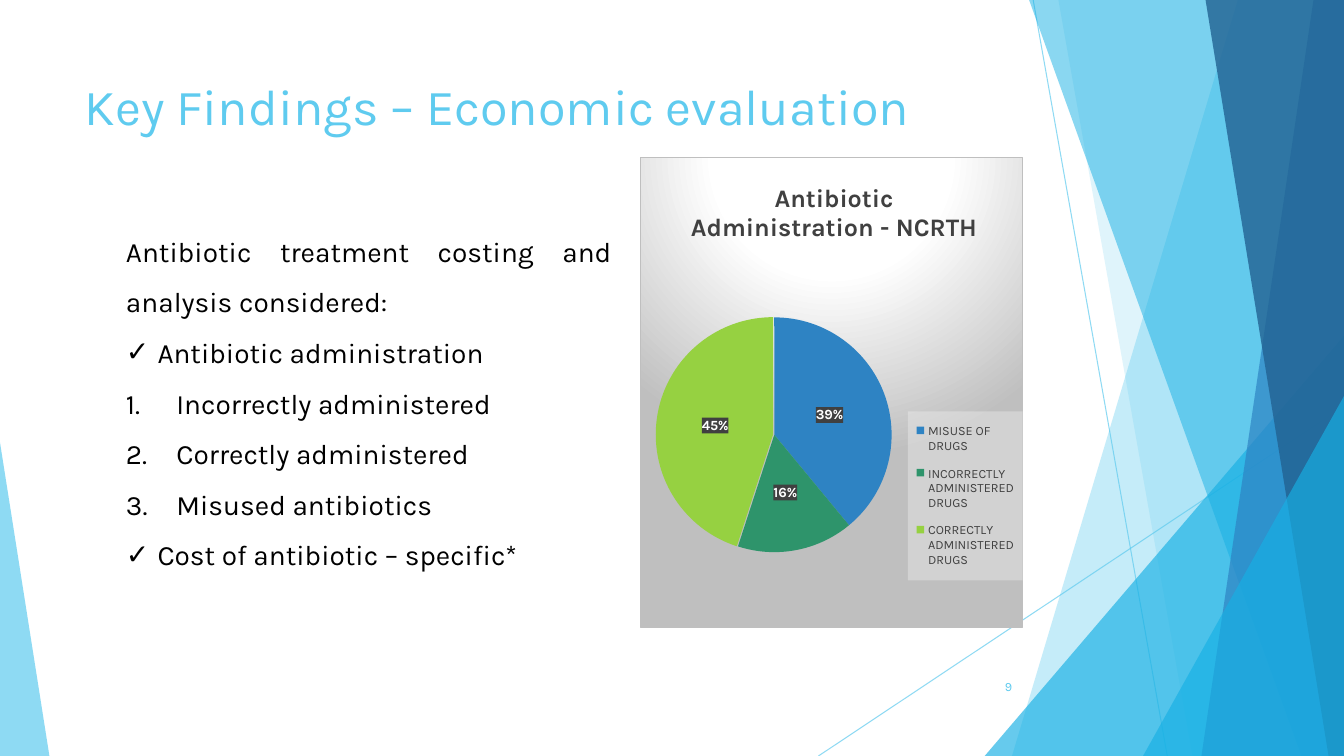
"""Build the Key Findings slide with its costing list and antibiotic pie chart."""
from dataclasses import dataclass

from lxml.etree import SubElement
from pptx import Presentation
from pptx.chart.data import CategoryChartData
from pptx.dml.color import RGBColor
from pptx.enum.chart import XL_CHART_TYPE as ChartType, XL_LABEL_POSITION as LabelPosition
from pptx.enum.chart import XL_LEGEND_POSITION as LegendPosition
from pptx.enum.shapes import MSO_CONNECTOR as Connector, MSO_SHAPE as Preset
from pptx.enum.text import MSO_ANCHOR as Anchor, MSO_AUTO_SIZE as AutoSize, PP_ALIGN as Align
from pptx.oxml import parse_xml
from pptx.oxml.ns import nsdecls, qn
from pptx.util import Pt


@dataclass(frozen=True)
class Theme:
    """Colours, font and type sizes of the slide."""
    font: str = "Karla"
    sky: str = "5FCBEF"
    cyan: str = "17B0E4"
    blue: str = "2E83C3"
    navy: str = "226292"
    green: str = "2E946B"
    lime: str = "96D141"
    black: str = "000000"
    white: str = "FFFFFF"
    dark: str = "404040"
    pale: str = "F2F2F2"
    grey: str = "BFBFBF"
    title: int = 36
    body: int = 20
    chart_title: int = 18
    label: int = 10
    small: int = 9


THEME = Theme()
WIDTH, HEIGHT = 960, 540

TITLE = "Key Findings – Economic evaluation"
PAGE = "9"
FINDINGS = [
    ("plain", "Antibiotic treatment costing and analysis considered:"),
    ("check", "Antibiotic administration"),
    ("number", "Incorrectly administered"),
    ("number", "Correctly administered"),
    ("number", "Misused antibiotics"),
    ("check", "Cost of antibiotic – specific*"),
]
INDENTS = {"plain": 0, "check": 22.5, "number": 36}
CHART_TITLE = "Antibiotic Administration - NCRTH"
SLICES = [
    ("MISUSE OF DRUGS", 39, THEME.blue),
    ("INCORRECTLY ADMINISTERED DRUGS", 16, THEME.green),
    ("CORRECTLY ADMINISTERED DRUGS", 45, THEME.lime),
]

BOXES = {
    "title": (53.3, 48.2, 676.8, 54.7),
    "page": (676, 476, 54, 28.8),
    "chart": (457.2, 112.3, 273.6, 336.2),
    "body": (82.8, 151.9, 361.4, 290),
}
RAYS = [((738, 0), (833.8, HEIGHT)), ((WIDTH, 290.2), (584.6, HEIGHT))]
DECORATION = [
    ("ribbon", (884.2, 722.9), THEME.sky, 36),
    ("ribbon", (756, 851.8), THEME.sky, 20),
    ("triangle", (703.4, 239.8, WIDTH, 1), THEME.cyan, 66),
    ("ribbon", (735.1, 929.5), THEME.cyan, 50),
    ("ribbon", (938.2, 858.2), THEME.blue, 70),
    ("ribbon", (861.1, 949), THEME.navy, 80),
    ("triangle", (816.5, 283, WIDTH, 1), THEME.cyan, 66),
    ("triangle", (0, 316.1, 35.3, 0), THEME.sky, 70),
]


def points(values):
    return [Pt(value) for value in values]


def style(font, size, color, bold=False):
    font.name, font.size, font.bold = THEME.font, Pt(size), bold
    font.color.rgb = RGBColor.from_string(color)


def set_alpha(shape, percent):
    for color in shape.element.iter(qn("a:srgbClr")):
        SubElement(color, qn("a:alpha"), val=str(percent * 1000))


def place(shape, name):
    shape.left, shape.top, shape.width, shape.height = points(BOXES[name])


def add_rays(slide):
    for start, end in RAYS:
        ray = slide.shapes.add_connector(Connector.STRAIGHT, *points(start + end))
        ray.line.width = Pt(0.75)
        ray.line.color.rgb = RGBColor.from_string(THEME.sky)
        set_alpha(ray, 70)
        SubElement(ray.element.spPr, qn("a:effectLst"))


def add_decoration(slide):
    for kind, geometry, color, alpha in DECORATION:
        if kind == "ribbon":
            top, bottom = geometry
            builder = slide.shapes.build_freeform(Pt(top), 0)
            corners = [(WIDTH, 0), (WIDTH, HEIGHT), (bottom, HEIGHT)]
            builder.add_line_segments([points(corner) for corner in corners], close=True)
            shape = builder.convert_to_shape()
        else:
            left, top, right, apex = geometry
            box = points((left, top, right - left, HEIGHT - top))
            shape = slide.shapes.add_shape(Preset.ISOSCELES_TRIANGLE, *box)
            shape.adjustments[0] = apex
        shape.shadow.inherit = False
        shape.fill.solid()
        shape.fill.fore_color.rgb = RGBColor.from_string(color)
        shape.line.fill.background()
        set_alpha(shape, alpha)


def add_line(shape, name, text, size, align):
    place(shape, name)
    frame = shape.text_frame
    frame.text = text
    frame.word_wrap, frame.auto_size = True, AutoSize.NONE
    frame.vertical_anchor = Anchor.MIDDLE
    frame.paragraphs[0].alignment = align
    style(frame.paragraphs[0].runs[0].font, size, THEME.sky)


def set_bullet(paragraph, kind):
    properties = paragraph._p.get_or_add_pPr()
    indent = Pt(INDENTS[kind])
    properties.set("marL", str(indent))
    properties.set("indent", str(-indent))
    if kind == "plain":
        SubElement(properties, qn("a:buNone"))
    elif kind == "check":
        SubElement(properties, qn("a:buChar"), char="✓")
    else:
        SubElement(properties, qn("a:buFont"), typeface=THEME.font)
        SubElement(properties, qn("a:buAutoNum"), type="arabicPeriod")


def fill_body(body):
    place(body, "body")
    frame = body.text_frame
    frame.text = "\n".join(text for kind, text in FINDINGS)
    frame.word_wrap, frame.auto_size = True, AutoSize.NONE
    frame.vertical_anchor = Anchor.TOP
    for paragraph, (kind, text) in zip(frame.paragraphs, FINDINGS):
        paragraph.alignment = Align.JUSTIFY if kind == "plain" else Align.LEFT
        paragraph.line_spacing = 1.5
        paragraph.space_before, paragraph.space_after = Pt(0), Pt(0.1)
        set_bullet(paragraph, kind)
        style(paragraph.runs[0].font, THEME.body, THEME.black)


def set_layout(parent, index, target=None, **fractions):
    for previous in parent.findall(qn("c:layout")):
        parent.remove(previous)
    modes = {"xMode": "edge", "yMode": "edge"}
    settings = {"layoutTarget": target, **modes} if target else modes
    items = {**settings, **fractions}
    tags = "".join(f'<c:{tag} val="{value}"/>' for tag, value in items.items())
    layout = f'<c:layout {nsdecls("c")}><c:manualLayout>{tags}</c:manualLayout></c:layout>'
    parent.insert(index, parse_xml(layout))


def chart_fill(content):
    return parse_xml(f'<c:spPr {nsdecls("c", "a")}>{content}</c:spPr>')


def solid(color, alpha=100):
    return f'<a:solidFill><a:srgbClr val="{color}"><a:alpha val="{alpha * 1000}"/></a:srgbClr></a:solidFill>'


def add_pie(slide):
    data = CategoryChartData()
    data.categories = [name for name, value, color in SLICES]
    data.add_series("Series 1", [value for name, value, color in SLICES])
    chart = slide.shapes.add_chart(ChartType.PIE, *points(BOXES["chart"]), data).chart
    style(chart.font, THEME.label, THEME.black)
    chart.has_title = chart.has_legend = True
    chart.chart_title.text_frame.text = CHART_TITLE
    style(chart.chart_title.text_frame.paragraphs[0].runs[0].font, THEME.chart_title, THEME.dark, True)
    chart.legend.position = LegendPosition.RIGHT
    chart.legend.include_in_layout = False
    style(chart.legend.font, THEME.small, THEME.dark)

    plot = chart.plots[0]
    plot.vary_by_categories = True
    plot.has_data_labels = True
    labels = plot.data_labels
    labels.show_percentage, labels.show_value = True, False
    labels.number_format, labels.number_format_is_linked = "0%", False
    labels.position = LabelPosition.CENTER
    style(labels.font, THEME.label, THEME.white, True)
    for index, (name, value, color) in enumerate(SLICES):
        fill = plot.series[0].points[index].format.fill
        fill.solid()
        fill.fore_color.rgb = RGBColor.from_string(color)

    root = chart.element
    parts = {name: next(root.iter(qn(f"c:{name}"))) for name in ("title", "legend", "plotArea", "dLbls")}
    set_layout(parts["title"], 1, x=0.12, y=0.04)
    set_layout(parts["plotArea"], 0, "inner", x=0.04, y=0.34, w=0.62, h=0.5)
    set_layout(parts["legend"], 1, x=0.7, y=0.54, w=0.3, h=0.36)
    for name, color, alpha in (("legend", THEME.pale, 39), ("dLbls", THEME.dark, 90)):
        parts[name].find(qn("c:txPr")).addprevious(chart_fill(solid(color, alpha)))
    last_slice = list(root.iter(qn("c:dPt")))[-1]
    last_slice.find(qn("c:spPr")).addprevious(parse_xml(f'<c:explosion {nsdecls("c")} val="1"/>'))
    stops = ((0, THEME.white), (39, THEME.white), (100, THEME.grey))
    stop_tags = "".join(f'<a:gs pos="{at * 1000}"><a:srgbClr val="{color}"/></a:gs>' for at, color in stops)
    focus = '<a:path path="circle"><a:fillToRect l="50000" t="-80000" r="50000" b="180000"/></a:path>'
    border = f'<a:ln w="{Pt(0.75)}">{solid(THEME.grey)}</a:ln>'
    background = f"<a:gradFill><a:gsLst>{stop_tags}</a:gsLst>{focus}</a:gradFill>{border}"
    root.find(qn("c:chart")).addnext(chart_fill(background))


def main():
    presentation = Presentation()
    presentation.slide_width, presentation.slide_height = Pt(WIDTH), Pt(HEIGHT)
    slide = presentation.slides.add_slide(presentation.slide_layouts[1])
    add_rays(slide)
    add_decoration(slide)
    add_line(slide.shapes.title, "title", TITLE, THEME.title, Align.LEFT)
    page = slide.shapes.add_textbox(*points(BOXES["page"]))
    add_line(page, "page", PAGE, THEME.small, Align.RIGHT)
    add_pie(slide)
    fill_body(slide.placeholders[1])
    presentation.save("out.pptx")


if __name__ == "__main__":
    main()
